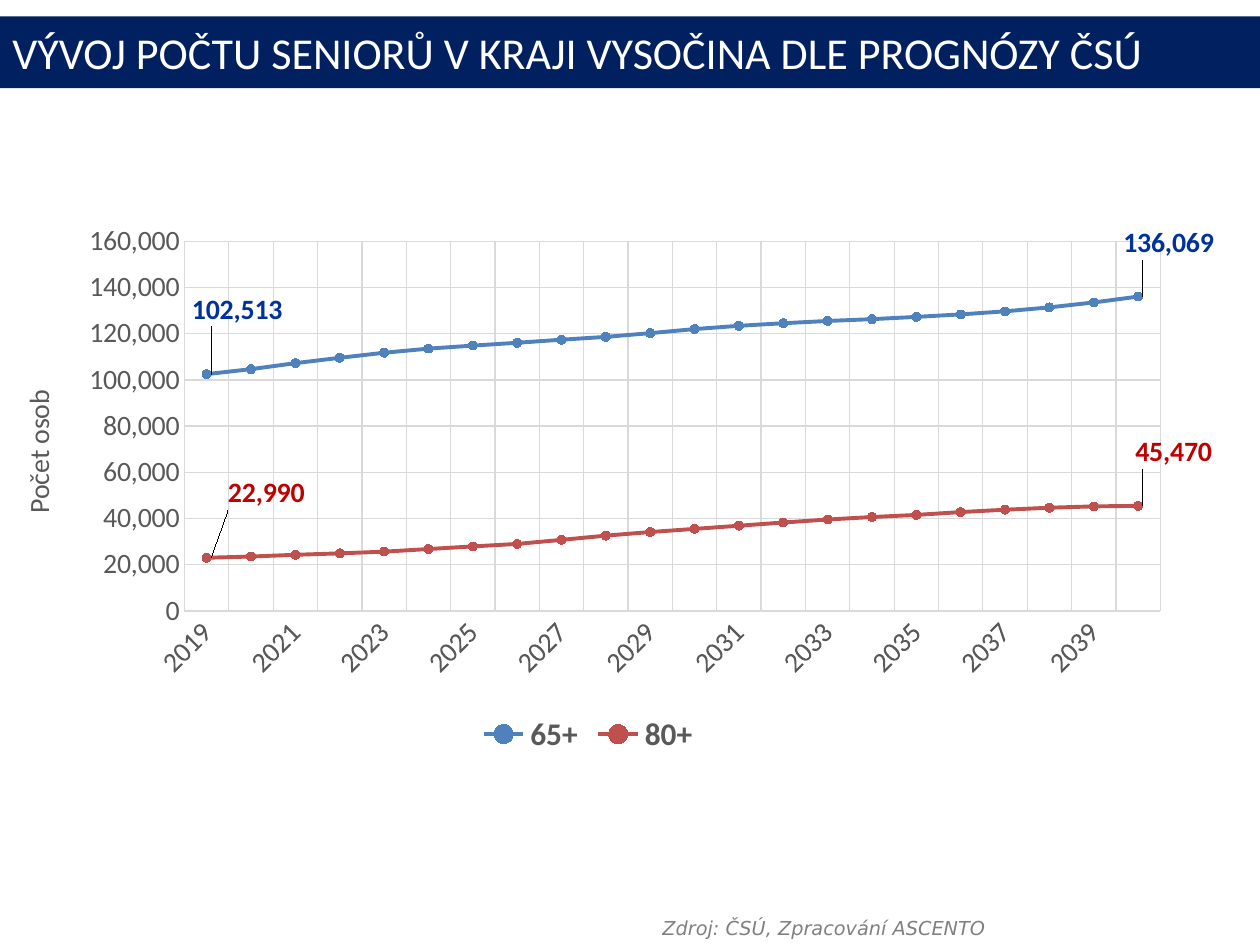
from lxml.etree import SubElement
from pptx import Presentation
from pptx.chart.data import CategoryChartData
from pptx.dml.color import RGBColor
from pptx.enum.chart import (XL_CHART_TYPE, XL_LABEL_POSITION, XL_LEGEND_POSITION,
                             XL_MARKER_STYLE, XL_TICK_MARK)
from pptx.enum.shapes import MSO_SHAPE
from pptx.enum.text import MSO_ANCHOR, PP_ALIGN
from pptx.oxml import parse_xml
from pptx.oxml.ns import qn
from pptx.util import Inches, Pt

NAVY = RGBColor(0x00, 0x20, 0x60)
WHITE = RGBColor(0xFF, 0xFF, 0xFF)
BLACK = RGBColor(0x00, 0x00, 0x00)
GRAY = RGBColor(0x80, 0x80, 0x80)
DARK = RGBColor(0x59, 0x59, 0x59)
PALE = RGBColor(0xD9, 0xD9, 0xD9)
BLUE = RGBColor(0x4F, 0x81, 0xBD)
RED = RGBColor(0xC0, 0x50, 0x4D)
DEEP = RGBColor(0x00, 0x33, 0x99)
BLOOD = RGBColor(0xC0, 0x00, 0x00)

YEARS = [str(year) for year in range(2019, 2041)]
OLD = [102513, 104649, 107232, 109582, 111755, 113546, 114851, 116063, 117409,
       118631, 120262, 122018, 123415, 124534, 125532, 126296, 127278, 128363,
       129683, 131411, 133538, 136069]
ELDER = [22990, 23518, 24265, 24915, 25652, 26772, 27912, 28985, 30746, 32559,
         34131, 35502, 36867, 38276, 39564, 40622, 41547, 42764, 43791, 44666,
         45238, 45470]
LINES = [
    ("65+", OLD, BLUE, DEEP, {0: (-0.02, -0.12), 21: (-0.02, -0.1)}),
    ("80+", ELDER, RED, BLOOD, {0: (0.01, -0.12), 21: (-0.01, -0.1)}),
]
LEADER = (
    '<c:extLst xmlns:c="http://schemas.openxmlformats.org/drawingml/2006/chart">'
    '<c:ext uri="{CE6537A1-D6FC-4f65-9D91-7224C49458BB}" '
    'xmlns:c15="http://schemas.microsoft.com/office/drawing/2012/chart">'
    '<c15:showLeaderLines val="1"/></c:ext></c:extLst>')


class Deck:
    def __init__(self):
        self.deck = Presentation()
        self.deck.slide_width = Inches(10)
        self.deck.slide_height = Inches(7.5)
        self.slide = self.deck.slides.add_slide(self.deck.slide_layouts[6])
        self.face = "Calibri"

    def style(self, font, size, color, **extra):
        form = {"name": self.face, "size": Pt(size), "bold": False, **extra}
        for key, value in form.items():
            setattr(font, key, value)
        font.color.rgb = color

    def label(self, shape, text, size, color, **extra):
        frame = shape.text_frame
        frame.word_wrap = True
        line = frame.paragraphs[0]
        line.alignment = PP_ALIGN.LEFT
        run = line.add_run()
        run.text = text
        self.style(run.font, size, color, **extra)
        return frame

    def banner(self, box, text):
        shape = self.slide.shapes.add_shape(MSO_SHAPE.RECTANGLE, *map(Inches, box))
        shape.shadow.inherit = False
        shape.fill.solid()
        shape.fill.fore_color.rgb = NAVY
        shape.line.fill.background()
        frame = self.label(shape, text, 25.2, WHITE)
        frame.vertical_anchor = MSO_ANCHOR.MIDDLE

    def note(self, box, text):
        shape = self.slide.shapes.add_textbox(*map(Inches, box))
        self.label(shape, text, 11, GRAY, name="DejaVu Sans", italic=True)

    def stroke(self, line, color, width):
        line.color.rgb = color
        line.width = Pt(width)

    def place(self, node, spot, **sides):
        old = node.find(qn("c:layout"))
        if old is not None:
            node.remove(old)
        layout = SubElement(node, qn("c:layout"))
        node.insert(spot, layout)
        manual = SubElement(layout, qn("c:manualLayout"))
        for key, value in sides.items():
            SubElement(manual, qn("c:" + key)).set("val", str(value))

    def axis(self, axis):
        self.style(axis.tick_labels.font, 16, DARK)
        axis.major_tick_mark = XL_TICK_MARK.NONE
        axis.minor_tick_mark = XL_TICK_MARK.NONE
        axis.has_major_gridlines = True
        self.stroke(axis.major_gridlines.format.line, PALE, 0.75)

    def series(self, series, color, ink, tags):
        series.smooth = False
        self.stroke(series.format.line, color, 2.25)
        mark = series.marker
        mark.style = XL_MARKER_STYLE.CIRCLE
        mark.size = 5
        mark.format.fill.solid()
        mark.format.fill.fore_color.rgb = color
        self.stroke(mark.format.line, color, 0.75)
        labels = series.data_labels
        labels.show_value = False
        for index, (left, top) in tags.items():
            label = series.points[index].data_label
            self.style(label.font, 16, ink, bold=True)
            label.position = XL_LABEL_POSITION.RIGHT
            node = labels._element.xpath(f"c:dLbl[c:idx/@val='{index}']")[0]
            self.place(node, 1, x=left, y=top)
        labels._element.append(parse_xml(LEADER))

    def chart(self, box, title):
        data = CategoryChartData(number_format="#,##0")
        data.categories = YEARS
        for name, values, *_ in LINES:
            data.add_series(name, values)
        chart = self.slide.shapes.add_chart(
            XL_CHART_TYPE.LINE_MARKERS, *map(Inches, box), data).chart
        chart.has_title = False
        self.style(chart.font, 16, BLACK)
        plot = chart.plots[0]
        plot.vary_by_categories = False
        for series, (_, _, color, ink, tags) in zip(plot.series, LINES):
            self.series(series, color, ink, tags)

        years, count = chart.category_axis, chart.value_axis
        for axis in (years, count):
            self.axis(axis)
        self.stroke(years.format.line, PALE, 0.75)
        years._element.find(qn("c:txPr")).find(qn("a:bodyPr")).set("rot", "-2700000")
        count.format.line.fill.background()
        count.minimum_scale, count.maximum_scale = 0, 160000
        count.major_unit = 20000
        count.tick_labels.number_format = "#,##0"
        count.tick_labels.number_format_is_linked = False
        run = count.axis_title.text_frame.paragraphs[0].add_run()
        run.text = title
        self.style(run.font, 16, DARK)

        chart.has_legend = True
        legend = chart.legend
        legend.position = XL_LEGEND_POSITION.BOTTOM
        legend.include_in_layout = False
        self.style(legend.font, 18, DARK, bold=True)
        self.place(legend._element, 1, xMode="edge", yMode="edge", x=0.39, y=0.91)
        self.place(plot._element.getparent(), 0, layoutTarget="inner", xMode="edge",
                   yMode="edge", x=0.15, y=0.03, w=0.81, h=0.69)

    def save(self):
        self.deck.save("out.pptx")


def main():
    deck = Deck()
    deck.banner((0, 0.13, 10, 0.57),
                "VÝVOJ POČTU SENIORŮ V KRAJI VYSOČINA DLE PROGNÓZY ČSÚ")
    deck.chart((0.03, 1.78, 9.61, 4.26), "Počet osob")
    deck.note((5.16, 7.22, 4.8, 0.29), "Zdroj: ČSÚ, Zpracování ASCENTO")
    deck.save()


if __name__ == "__main__":
    main()
